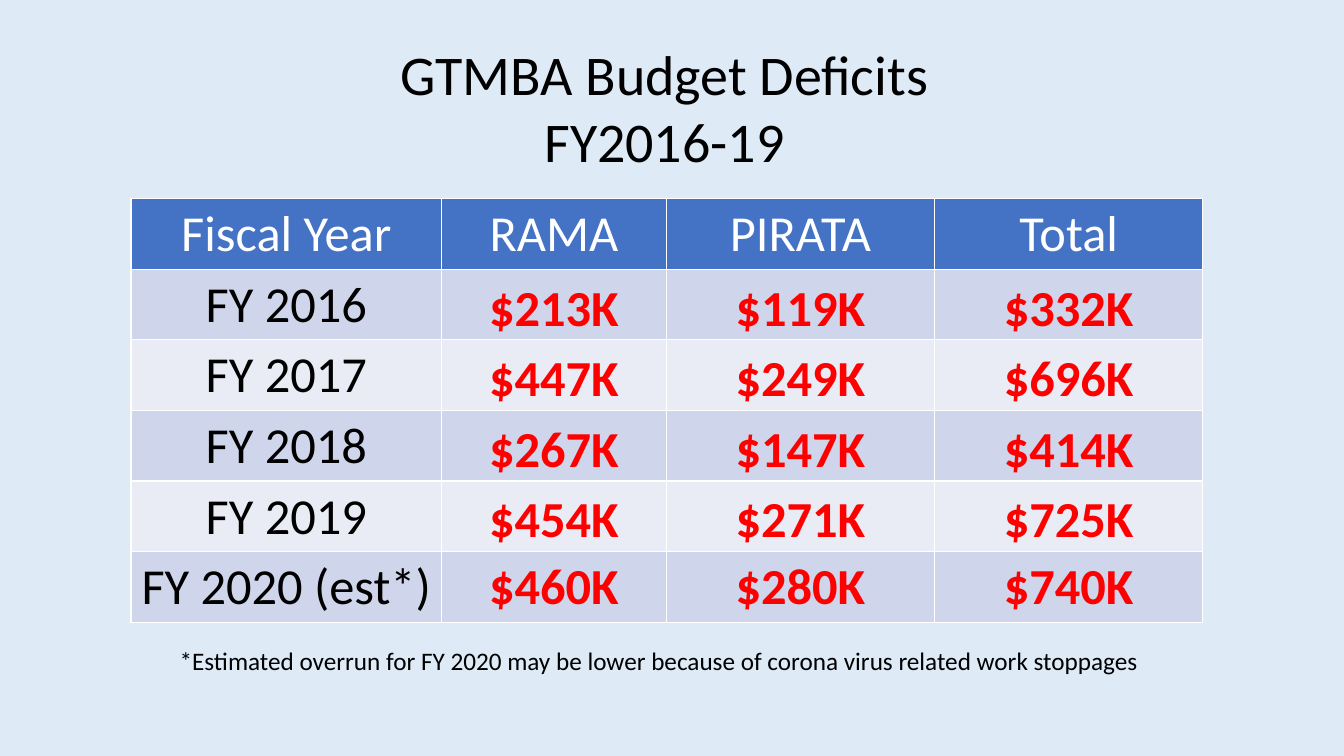
from pptx import Presentation
from pptx import util as u
from pptx.dml.color import RGBColor
from pptx.enum import text

FONT = "Calibri"
HEAD = ["Fiscal Year", "RAMA", "PIRATA", "Total"]
COSTS = [
    ["FY 2016", "$213K", "$119K", "$332K"],
    ["FY 2017", "$447K", "$249K", "$696K"],
    ["FY 2018", "$267K", "$147K", "$414K"],
    ["FY 2019", "$454K", "$271K", "$725K"],
    ["FY 2020 (est*)", "$460K", "$280K", "$740K"],
]
WIDTHS = [3.08, 2.23, 2.66, 2.66]


def paint(fill, color):
    fill.solid()
    fill.fore_color.rgb = RGBColor.from_string(color)


def style(para, size, color="000000", bold=False):
    para.alignment = text.PP_ALIGN.CENTER
    font = para.font
    font.name, font.size, font.bold = FONT, u.Pt(size), bold
    font.color.rgb = RGBColor.from_string(color)


def add_label(slide, box, lines, size):
    frame = slide.shapes.add_textbox(*map(u.Inches, box)).text_frame
    frame.word_wrap = True
    frame.text = "\n".join(lines)
    for para in frame.paragraphs:
        style(para, size)


def add_costs(slide, box):
    rows = [HEAD] + COSTS
    table = slide.shapes.add_table(len(rows), len(HEAD), *map(u.Inches, box)).table
    for col, width in zip(table.columns, WIDTHS):
        col.width = u.Inches(width)
    for r, row in enumerate(rows):
        table.rows[r].height = u.Inches(box[3] / len(rows))
        band = "4472C4" if r == 0 else "CFD5EA" if r % 2 else "E9EBF5"
        for c, word in enumerate(row):
            cell = table.cell(r, c)
            cell.text = word
            paint(cell.fill, band)
            cost = r > 0 and c > 0
            color = "FF0000" if cost else "000000" if r else "FFFFFF"
            style(cell.text_frame.paragraphs[0], 36, color, cost)
            # Final costs sit low in their cells; the estimate does not
            if cost and r < len(COSTS):
                cell.vertical_anchor = text.MSO_ANCHOR.BOTTOM
                cell.margin_left = cell.margin_right = cell.margin_top = u.Inches(0.01)
                cell.margin_bottom = 0


def main():
    deck = Presentation()
    deck.slide_width, deck.slide_height = u.Inches(13.33), u.Inches(7.5)
    slide = deck.slides.add_slide(deck.slide_layouts[6])
    paint(slide.background.fill, "DEEBF7")

    # Title, table, footnote
    add_label(slide, (1.57, 0.34, 10.04, 1.45), ["GTMBA Budget Deficits", "FY2016-19"], 40)
    add_costs(slide, (1.3, 1.97, sum(WIDTHS), 4.2))
    note = "*Estimated overrun for FY 2020 may be lower because of corona virus related work stoppages"
    add_label(slide, (1.46, 6.35, 10.15, 0.4), [note], 18)
    deck.save("out.pptx")


if __name__ == "__main__":
    main()
